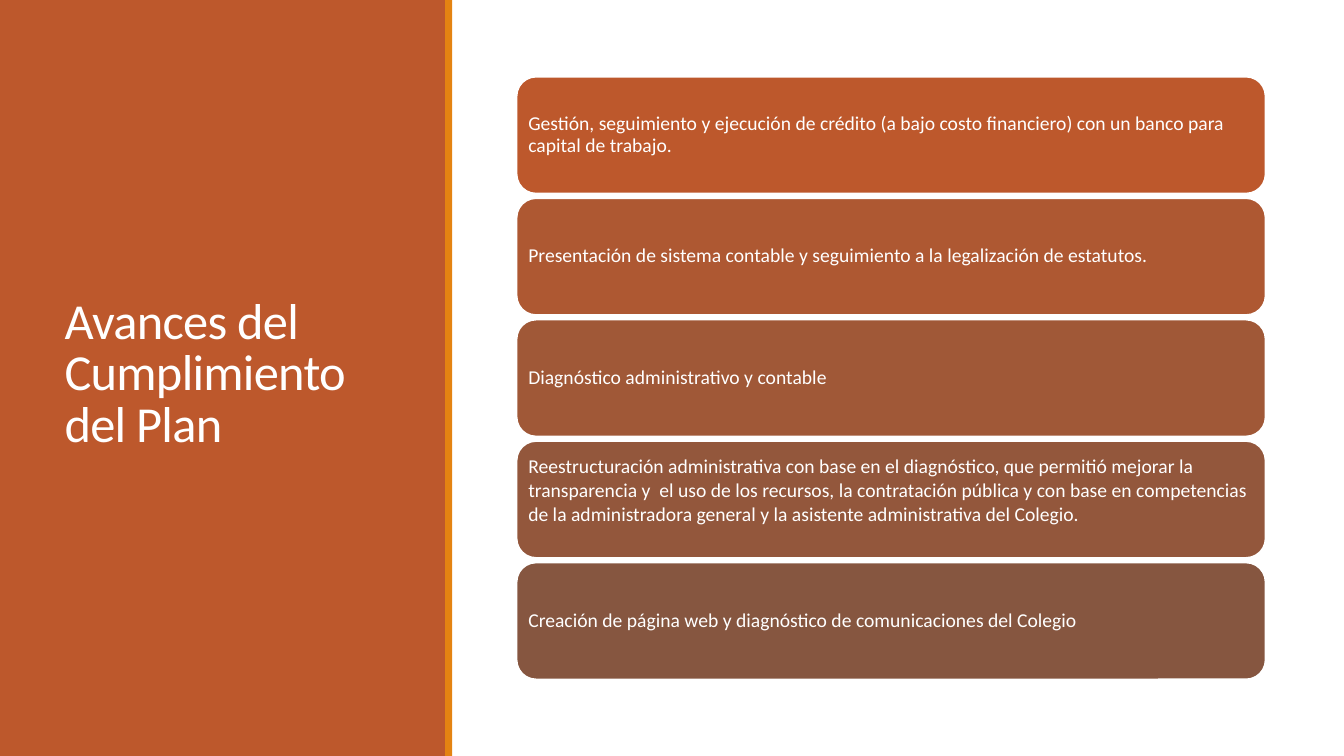
from dataclasses import dataclass

from pptx import Presentation
from pptx.dml.color import RGBColor
from pptx.enum import shapes, text
from pptx.util import Pt

FONT = "Calibri"
WHITE, RUST, AMBER = "FFFFFF", "BD582C", "E48312"
LEFT, TOP, WIDTH, HEIGHT, PITCH = 369, 54.8, 535, 83.5, 86.75
INSET = 4.3


@dataclass
class Card:
    words: str
    fill: str
    line: float = 0.9
    lift: float = 0  # extra inset below the text


CARDS = [
    Card("Gestión, seguimiento y ejecución de crédito (a bajo costo financiero) "
         "con un banco para capital de trabajo.", RUST),
    Card("Presentación de sistema contable y seguimiento a la legalización "
         "de estatutos.", "AE5832"),
    Card("Diagnóstico administrativo y contable", "A05837"),
    Card("Reestructuración administrativa con base en el diagnóstico, que permitió "
         "mejorar la transparencia y  el uso de los recursos, la contratación pública "
         "y con base en competencias de la administradora general y la asistente "
         "administrativa del Colegio.", "93573C", 1.0, 14),
    Card("Creación de página web y diagnóstico de comunicaciones del Colegio",
         "865640"),
]


def color(code: str) -> RGBColor:
    return RGBColor.from_string(code)


def block(slide, kind, x: float, y: float, w: float, h: float, fill: str):
    shape = slide.shapes.add_shape(kind, Pt(x), Pt(y), Pt(w), Pt(h))
    shape.shadow.inherit = False
    shape.fill.solid()
    shape.fill.fore_color.rgb = color(fill)
    shape.line.fill.background()
    return shape


def style(par, size: float, line: float) -> None:
    par.alignment = text.PP_ALIGN.LEFT
    par.line_spacing = line
    par.font.name = FONT
    par.font.size = Pt(size)
    par.font.color.rgb = color(WHITE)


def draw_card(slide, card: Card, row: int) -> None:
    shape = block(slide, shapes.MSO_SHAPE.ROUNDED_RECTANGLE,
                  LEFT, TOP + row * PITCH, WIDTH, HEIGHT, card.fill)
    shape.line.color.rgb = color(WHITE)
    shape.line.width = Pt(1.25)
    frame = shape.text_frame
    frame.word_wrap = True
    frame.vertical_anchor = text.MSO_ANCHOR.MIDDLE
    frame.margin_left = frame.margin_right = frame.margin_top = Pt(INSET)
    frame.margin_bottom = Pt(INSET + card.lift)
    frame.text = card.words
    style(frame.paragraphs[0], 14, card.line)


def draw_title(slide, words: str) -> None:
    title = slide.shapes.title
    title.left, title.top = Pt(38.9), Pt(41)
    title.width, title.height = Pt(242.6), Pt(454.3)
    frame = title.text_frame
    frame.word_wrap = True
    frame.auto_size = text.MSO_AUTO_SIZE.NONE
    frame.vertical_anchor = text.MSO_ANCHOR.MIDDLE
    frame.text = words
    par = frame.paragraphs[0]
    style(par, 36, 0.85)
    par.runs[0]._r.get_or_add_rPr().set("spc", "-50")
    # Bring the title in front of the panel
    slide.shapes._spTree.append(title._element)


def main() -> None:
    deck = Presentation()
    deck.slide_width, deck.slide_height = Pt(960), Pt(540)
    slide = deck.slides.add_slide(deck.slide_layouts[5])

    # Side panel with its title and edge
    rect = shapes.MSO_SHAPE.RECTANGLE
    block(slide, rect, 0, 0, 319, 540, RUST)
    draw_title(slide, "Avances del Cumplimiento del Plan")
    block(slide, rect, 318, 0, 5, 540, AMBER)

    # Stack of progress cards
    for row, card in enumerate(CARDS):
        draw_card(slide, card, row)

    deck.save("out.pptx")


if __name__ == "__main__":
    main()
